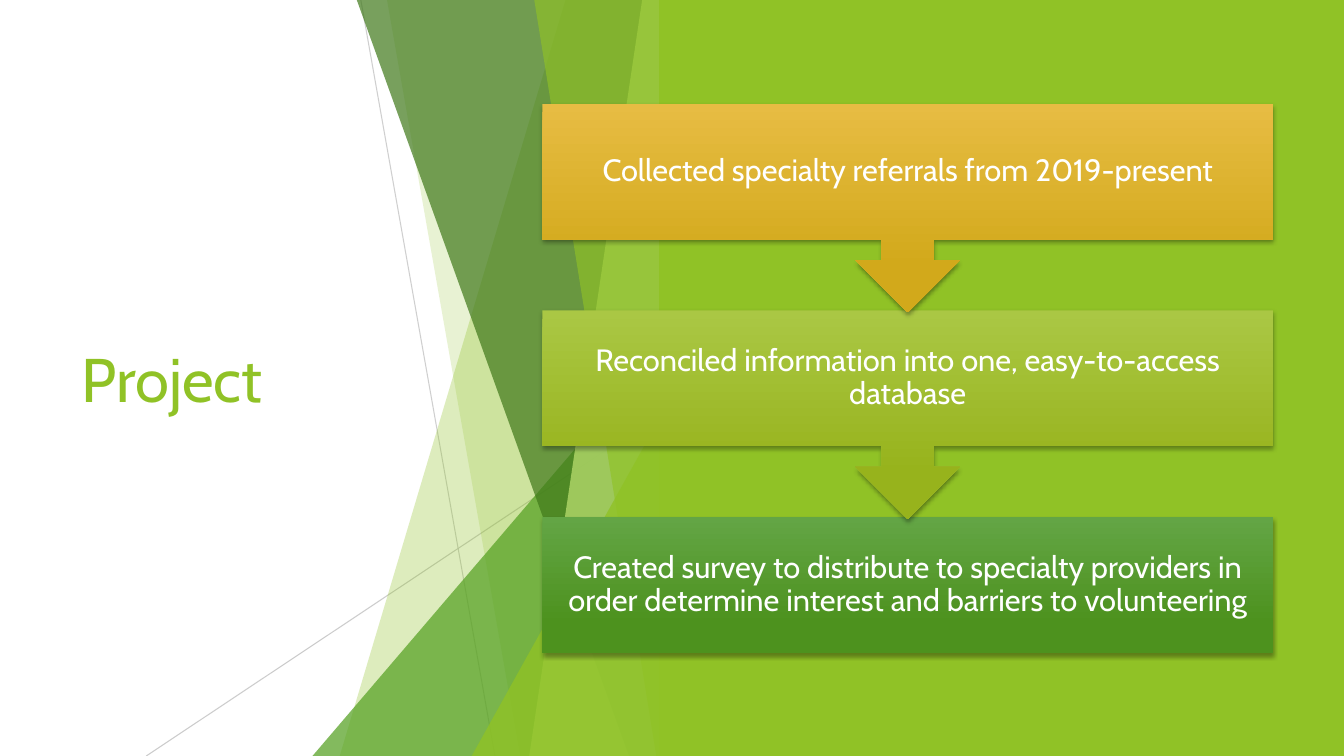
"""Build the Project slide: a faceted green backdrop, a title and a three-step flow."""
from lxml import etree
from pptx import Presentation, util as u
from pptx.dml.color import RGBColor
from pptx.enum import shapes, text
from pptx.oxml import ns


def color(hex_code):
    return RGBColor.from_string(hex_code)


def fade(shape, percent):
    for tint in shape._element.spPr.iter(ns.qn("a:srgbClr")):
        etree.SubElement(tint, ns.qn("a:alpha"), val=str(percent * 1000))


presentation = Presentation()
presentation.slide_width = u.Inches(13.333)
presentation.slide_height = u.Inches(7.5)
COLUMN = presentation.slide_width / 100
ROW = presentation.slide_height / 100
FACET_RIGHT = 50
FONT = "Cabin"

slide = presentation.slides.add_slide(presentation.slide_layouts[5])

title = slide.shapes.title
title.left, title.top = int(5.33 * COLUMN), int(20.13 * ROW)
title.width, title.height = int(29.1 * COLUMN), int(59.73 * ROW)
title.text_frame.text = "Project"
title.text_frame.vertical_anchor = text.MSO_ANCHOR.MIDDLE
title.text_frame.word_wrap = True
paragraph = title.text_frame.paragraphs[0]
paragraph.alignment = text.PP_ALIGN.LEFT
paragraph.font.name = FONT
paragraph.font.size = u.Pt(44)
paragraph.font.color.rgb = color("90C226")

rays = [(26.85, 0, 36.83, 100, 75), (FACET_RIGHT, 53.73, 10.88, 100, 80)]
for start_x, start_y, end_x, end_y, opacity in rays:
    ray = slide.shapes.add_connector(
        shapes.MSO_CONNECTOR.STRAIGHT,
        int(start_x * COLUMN), int(start_y * ROW), int(end_x * COLUMN), int(end_y * ROW))
    ray.line.color.rgb = color("BFBFBF")
    ray.line.width = u.Pt(0.75)
    fade(ray, opacity)
    etree.SubElement(ray._element.spPr, ns.qn("a:effectLst"))

facets = [
    ("band", 42.08, 25.28, "90C226", 30),
    ("band", 28.8, 38.7, "90C226", 20),
    ("triangle", 44.4, 23.25, "54A021", 72),
    ("band", 26.55, 46.8, "3F7819", 70),
    ("band", 47.78, 39.38, "C0E474", 70),
    ("band", 39.75, 48.83, "90C226", 65),
    ("triangle", 52.4, 35.1, "90C226", 80),
]
for kind, top, bottom_left, hex_code, opacity in facets:
    if kind == "band":
        outline = slide.shapes.build_freeform(int(top * COLUMN), 0)
        corners = [(FACET_RIGHT, 0), (FACET_RIGHT, 100), (bottom_left, 100)]
        outline.add_line_segments([(int(x * COLUMN), int(y * ROW)) for x, y in corners])
        facet = outline.convert_to_shape()
    else:
        facet = slide.shapes.add_shape(
            shapes.MSO_SHAPE.ISOSCELES_TRIANGLE, int(bottom_left * COLUMN), int(top * ROW),
            int((FACET_RIGHT - bottom_left) * COLUMN), int((100 - top) * ROW))
        facet.adjustments[0] = 1
    facet.fill.solid()
    facet.fill.fore_color.rgb = color(hex_code)
    facet.line.fill.background()
    facet.shadow.inherit = False
    fade(facet, opacity)

panel = slide.shapes.add_shape(
    shapes.MSO_SHAPE.RECTANGLE, int(49.05 * COLUMN), 0,
    int(50.95 * COLUMN), presentation.slide_height)
panel.fill.solid()
panel.fill.fore_color.rgb = color("90C226")
panel.line.fill.background()
panel.shadow.inherit = False

CALLOUT = shapes.MSO_SHAPE.DOWN_ARROW_CALLOUT
steps = [
    ("Collected specialty referrals from 2019-present", CALLOUT, 27.6, "E7BC43", "D2A91B"),
    ("Reconciled information into one, easy-to-access database",
     CALLOUT, 27.6, "AAC744", "97B31C"),
    ("Created survey to distribute to specialty providers in order determine interest "
     "and barriers to volunteering", shapes.MSO_SHAPE.RECTANGLE, 18, "63A545", "4D921E"),
]
for index, (wording, preset, height, light, dark) in reversed(list(enumerate(steps))):
    step = slide.shapes.add_shape(
        preset, int(40.35 * COLUMN), int((13.73 + 27.33 * index) * ROW),
        int(54.38 * COLUMN), int(height * ROW))
    step.fill.gradient()
    step.fill.gradient_angle = 270
    for stop, hex_code, position in zip(step.fill.gradient_stops, (light, dark), (0, 0.78)):
        stop.color.rgb = color(hex_code)
        stop.position = position
    step.line.fill.background()
    step.shadow.inherit = False
    effects = step._element.spPr.find(ns.qn("a:effectLst"))
    shadow = etree.SubElement(
        effects, ns.qn("a:outerShdw"), blurRad=str(u.Pt(3)), dist=str(u.Pt(2)),
        dir="5400000", rotWithShape="0")
    black = etree.SubElement(shadow, ns.qn("a:srgbClr"), val="000000")
    etree.SubElement(black, ns.qn("a:alpha"), val="35000")

    frame = step.text_frame
    frame.text = wording
    frame.word_wrap = True
    frame.vertical_anchor = text.MSO_ANCHOR.MIDDLE
    frame.margin_left = frame.margin_right = u.Inches(0.17)
    frame.margin_top = frame.margin_bottom = u.Inches(0.17)
    paragraph = frame.paragraphs[0]
    paragraph.alignment = text.PP_ALIGN.CENTER
    paragraph.line_spacing = 0.9
    paragraph.font.name = FONT
    paragraph.font.size = u.Pt(22)
    paragraph.font.color.rgb = color("FFFFFF")

presentation.save("out.pptx")
